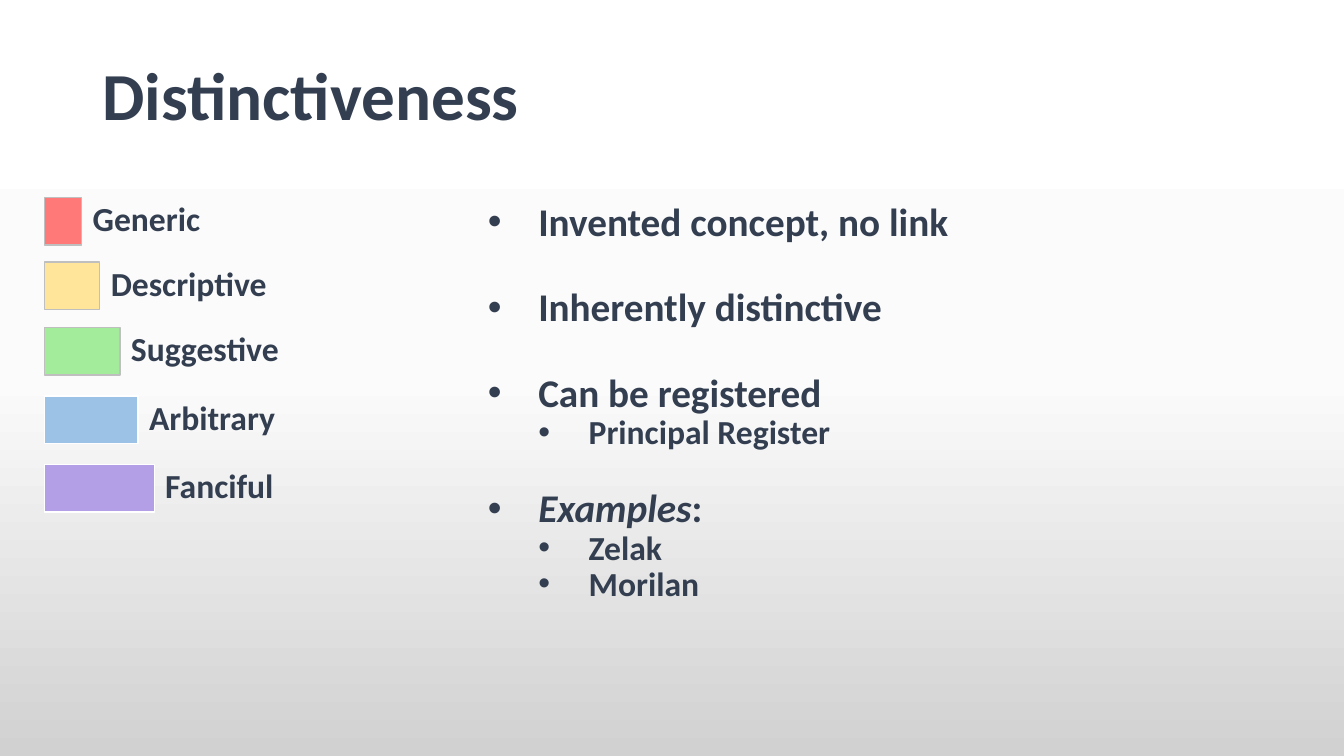
from copy import deepcopy
from dataclasses import dataclass

from lxml.etree import SubElement
from pptx import Presentation
from pptx.dml.color import RGBColor
from pptx.enum.shapes import MSO_SHAPE
from pptx.enum.text import MSO_ANCHOR
from pptx.oxml.ns import qn
from pptx.util import Inches, Pt

COLORS = {
    "text": "333F50", "white": "FFFFFF", "gray": "BFBFBF",
    "red": "FF7979", "yellow": "FEE599", "green": "A2EC9C",
    "blue": "9CC2E5", "purple": "B39FE5",
    "middle": "FBFBFB", "bottom": "D1D1D1",
}
FONT = "Calibri"
BAR_LEFT, BAR_HEIGHT = 0.44, 0.47


@dataclass
class Category:
    name: str
    top: float
    width: float
    fill: str
    line: str


@dataclass
class Point:
    text: str
    level: int = 0
    gap: float = 0
    italic_part: str = ""


CATEGORIES = [
    Category("Generic", 1.96, 0.37, "red", "gray"),
    Category("Descriptive", 2.6, 0.55, "yellow", "gray"),
    Category("Suggestive", 3.25, 0.75, "green", "gray"),
    Category("Arbitrary", 3.93, 0.93, "blue", "white"),
    Category("Fanciful", 4.61, 1.09, "purple", "white"),
]
POINTS = [
    Point("Invented concept, no link"),
    Point("Inherently distinctive", gap=30.7),
    Point("Can be registered", gap=30.7),
    Point("Principal Register", level=1),
    Point(":", gap=26.4, italic_part="Examples"),
    Point("Zelak", level=1),
    Point("Morilan", level=1),
]


def color(name: str) -> RGBColor:
    return RGBColor.from_string(COLORS[name])


def style_paragraph(para, size: float) -> None:
    para.line_spacing = 0.9
    for span in para.runs:
        span.font.name = FONT
        span.font.size = Pt(size)
        span.font.bold = True
        span.font.color.rgb = color("text")


def add_box(page, left: float, top: float, width: float, height: float):
    box = page.shapes.add_textbox(Inches(left), Inches(top), Inches(width), Inches(height))
    box.text_frame.word_wrap = True
    return box


def add_label(page, text: str, left: float, top: float, width: float, height: float, size: float):
    box = add_box(page, left, top, width, height)
    box.text_frame.text = text
    style_paragraph(box.text_frame.paragraphs[0], size)
    return box


def add_bullet(para, level: int) -> None:
    para.level = level
    properties = para._p.get_or_add_pPr()
    properties.set("marL", str(Inches(0.75 + 0.5 * level)))
    properties.set("indent", str(Inches(-0.5)))
    bullet_color = SubElement(properties, qn("a:buClr"))
    SubElement(bullet_color, qn("a:srgbClr"), val=COLORS["text"])
    SubElement(properties, qn("a:buFont"), typeface="Arial")
    SubElement(properties, qn("a:buChar"), char="•")


def add_category(page, category: Category) -> None:
    bar = page.shapes.add_shape(
        MSO_SHAPE.RECTANGLE, Inches(BAR_LEFT), Inches(category.top),
        Inches(category.width), Inches(BAR_HEIGHT))
    bar.shadow.inherit = False
    bar.fill.solid()
    bar.fill.fore_color.rgb = color(category.fill)
    bar.line.color.rgb = color(category.line)
    bar.line.width = Pt(1)
    add_label(page, category.name, BAR_LEFT + category.width + 0.01, category.top, 2.21, 0.5, 24)


def add_points(page, points: list[Point]) -> None:
    frame = add_box(page, 4.49, 1.96, 8.22, 4.83).text_frame
    for index, point in enumerate(points):
        para = frame.add_paragraph() if index else frame.paragraphs[0]
        para.text = point.italic_part or point.text
        if point.italic_part:
            para.runs[0].font.italic = True
            para.add_run().text = point.text
        para.space_before = Pt(point.gap)
        style_paragraph(para, 24 if point.level else 28)
        add_bullet(para, point.level)


def paint_background(page) -> None:
    fill = page.background.fill
    fill.gradient()
    fill.gradient_angle = 270
    stop_list = page.element.find(".//" + qn("a:gsLst"))
    stop_list.append(deepcopy(stop_list[0]))
    names = ("white", "middle", "bottom")
    for index, (stop, name) in enumerate(zip(fill.gradient_stops, names)):
        stop.position = index / 2
        stop.color.rgb = color(name)


def main() -> None:
    deck = Presentation()
    deck.slide_width, deck.slide_height = Inches(13.33), Inches(7.5)
    page = deck.slides.add_slide(deck.slide_layouts[6])
    paint_background(page)

    # Title
    title = add_label(page, "Distinctiveness", 0.92, 0.25, 11.5, 1.45, 48)
    title.text_frame.vertical_anchor = MSO_ANCHOR.MIDDLE

    # Distinctiveness scale
    for category in CATEGORIES:
        add_category(page, category)

    # Bullet points
    add_points(page, POINTS)
    deck.save("out.pptx")


if __name__ == "__main__":
    main()
